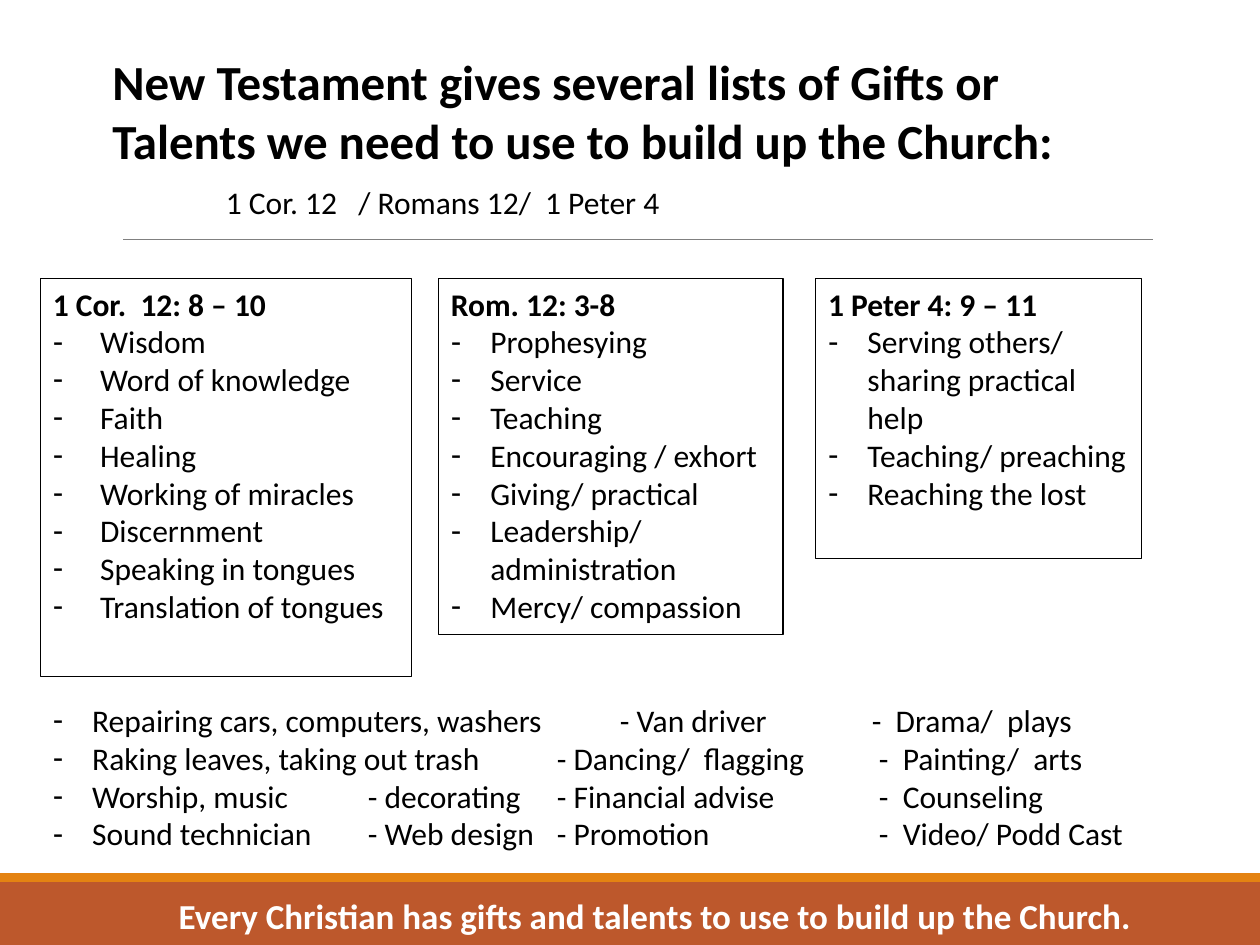
import pptx
import pptx.util
import pptx.dml.color
import pptx.enum.shapes
import pptx.enum.text
import lxml.etree

Pt = pptx.util.Pt
NS = "{http://schemas.openxmlformats.org/drawingml/2006/main}"

BOXES = [
    (1, (23, 159, 212, 227.5), 27, "1 Cor.  12: 8 – 10",
     ["Wisdom", "Word of knowledge", "Faith", "Healing", "Working of miracles",
      "Discernment", "Speaking in tongues", "Translation of tongues"]),
    (2, (250.5, 159, 197, 203.5), 22.5, "Rom. 12: 3-8",
     ["Prophesying", "Service", "Teaching", "Encouraging / exhort",
      "Giving/ practical", "Leadership/ administration", "Mercy/ compassion"]),
    (3, (466, 159, 186.5, 160), 22.5, "1 Peter 4: 9 – 11",
     ["Serving others/ sharing practical help", "Teaching/ preaching",
      "Reaching the lost"]),
]
TALENTS = [
    "Repairing cars, computers, washers\t\t- Van driver\t\t-  Drama/  plays",
    "Raking leaves, taking out trash\t\t- Dancing/  flagging\t\t -  Painting/  arts",
    "Worship, music\t\t- decorating\t- Financial advise\t\t -  Counseling",
    "Sound technician\t- Web design\t- Promotion\t\t\t -  Video/ Podd Cast",
]


def color(text):
    """Turn a hex string into a colour."""
    return pptx.dml.color.RGBColor.from_string(text)


def place(shape, area):
    """Move and size a shape, in points."""
    shape.left, shape.top, shape.width, shape.height = map(Pt, area)


def setup(frame):
    """Make a text frame wrap and start at its top."""
    frame.word_wrap = True
    frame.auto_size = pptx.enum.text.MSO_AUTO_SIZE.NONE
    frame.vertical_anchor = pptx.enum.text.MSO_ANCHOR.TOP


def style(para, size, bold=False, ink="000000"):
    """Format a paragraph and its runs."""
    para.alignment = pptx.enum.text.PP_ALIGN.LEFT
    para.space_before = Pt(0)
    for run in para.runs:
        run.font.name = "Calibri"
        run.font.size = Pt(size)
        run.font.bold = bold
        run.font.color.rgb = color(ink)


def bullet(para, indent):
    """Give a paragraph a dash with a hanging indent, or no bullet at zero."""
    props = para._p.get_or_add_pPr()
    props.set("marL", str(Pt(indent)))
    props.set("indent", str(-Pt(indent)))
    if indent:
        lxml.etree.SubElement(props, NS + "buChar", char="-")
    else:
        lxml.etree.SubElement(props, NS + "buNone")


def fill_list(holder, area, indent, items, head=None):
    """Fill a body placeholder with a dashed list under an optional heading."""
    place(holder, area)
    frame = holder.text_frame
    setup(frame)
    lines = [head] + items if head else items
    frame.text = "\n".join(lines)
    for num, para in enumerate(frame.paragraphs):
        top = bool(head) and num == 0
        style(para, 18, top)
        bullet(para, 0 if top else indent)


def label(slide, area, text, size, bold=False, ink="000000"):
    """Add a line of free text."""
    box = slide.shapes.add_textbox(*map(Pt, area))
    setup(box.text_frame)
    box.text_frame.text = text
    style(box.text_frame.paragraphs[0], size, bold, ink)


def band(slide, area, fill):
    """Add a plain colour band."""
    shape = slide.shapes.add_shape(
        pptx.enum.shapes.MSO_SHAPE.RECTANGLE, *map(Pt, area))
    shape.shadow.inherit = False
    shape.fill.solid()
    shape.fill.fore_color.rgb = color(fill)
    shape.line.fill.background()


def rule(slide, left, right, top):
    """Add a thin grey line across the slide."""
    line = slide.shapes.add_connector(
        pptx.enum.shapes.MSO_CONNECTOR.STRAIGHT,
        Pt(left), Pt(top), Pt(right), Pt(top))
    line.line.color.rgb = color("808080")
    line.line.width = Pt(0.5)
    lxml.etree.SubElement(line._element.spPr, NS + "effectLst")


def heading(slide, area, text):
    """Fill the title placeholder."""
    title = slide.shapes.title
    place(title, area)
    setup(title.text_frame)
    title.text_frame.text = text
    style(title.text_frame.paragraphs[0], 28, True)


def main():
    """Build the slide and save it."""
    deck = pptx.Presentation()
    deck.slide_width, deck.slide_height = Pt(720), Pt(540)
    slide = deck.slides.add_slide(deck.slide_layouts.get_by_name("Comparison"))
    band(slide, (0, 504, 720, 36), "BD582C")
    band(slide, (0, 499, 720, 5), "E48312")
    rule(slide, 70.5, 659, 137)
    heading(slide, (57, 26, 584.5, 75),
            "New Testament gives several lists of Gifts or "
            "Talents we need to use to build up the Church:")
    label(slide, (122, 101, 418, 29), "1 Cor. 12   / Romans 12/  1 Peter 4", 18)
    for slot, area, indent, head, items in BOXES:
        holder = slide.placeholders[slot]
        fill_list(holder, area, indent, items, head)
        holder.line.color.rgb = color("000000")
        holder.line.width = Pt(0.75)
    fill_list(slide.placeholders[4], (23, 397, 658, 94), 22.5, TALENTS)
    label(slide, (95, 507.5, 625, 32),
          "Every Christian has gifts and talents to use to build up the Church.",
          20, True, "FFFFFF")
    deck.save("out.pptx")


if __name__ == "__main__":
    main()
